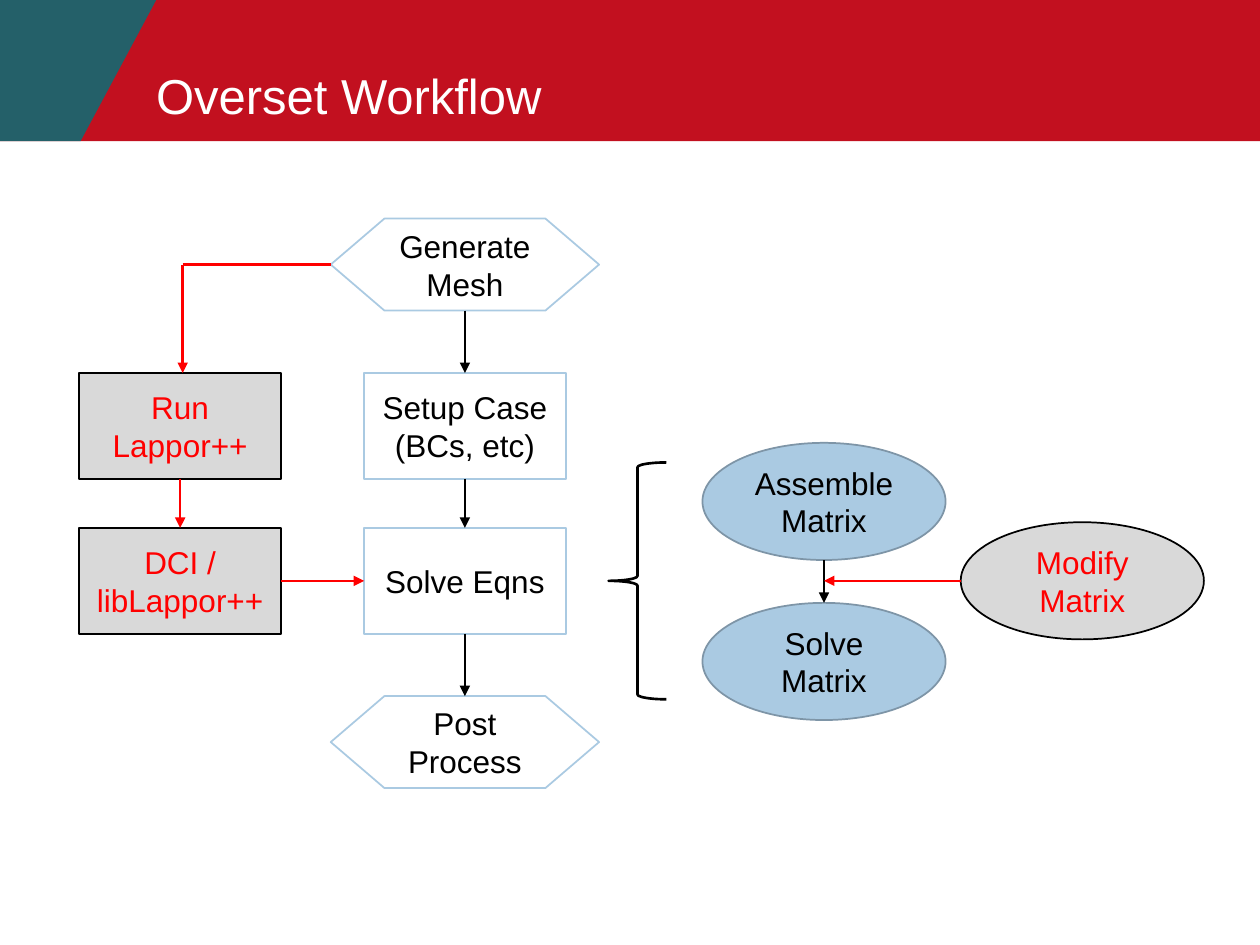
"""Build the Overset Workflow slide."""
from dataclasses import dataclass

from lxml.etree import SubElement
from pptx import Presentation
from pptx.dml.color import RGBColor
from pptx.enum.shapes import MSO_CONNECTOR, MSO_SHAPE
from pptx.enum.text import MSO_ANCHOR, PP_ALIGN
from pptx.oxml.ns import qn
from pptx.util import Inches, Pt

RED = RGBColor(0xC2, 0x10, 0x1F)
TEAL = RGBColor(0x24, 0x60, 0x69)
WHITE = RGBColor(0xFF, 0xFF, 0xFF)
BLACK = RGBColor(0x00, 0x00, 0x00)
LIGHT_BLUE = RGBColor(0xAA, 0xCA, 0xE2)
SLATE = RGBColor(0x7E, 0x95, 0xA7)
GREY = RGBColor(0xD9, 0xD9, 0xD9)
OVERSET_RED = RGBColor(0xFF, 0x00, 0x00)

BANNER_HEIGHT = 1.12
MAIN_X, OVERSET_X, MATRIX_X, MODIFY_X = 3.69, 1.43, 6.54, 8.59
MESH_Y, SETUP_Y, SOLVE_Y, POST_Y = 2.1, 3.38, 4.61, 5.89
ASSEMBLE_Y, SOLVE_MATRIX_Y = 3.98, 5.25


@dataclass(frozen=True)
class Style:
    """Geometry, size and colours shared by one kind of step."""
    geometry: MSO_SHAPE
    width: float
    height: float
    fill: RGBColor
    outline: RGBColor
    ink: RGBColor = BLACK


@dataclass(frozen=True)
class Step:
    """A labelled step placed by its centre."""
    label: str
    x: float
    y: float
    style: Style

    @property
    def left(self) -> float:
        """Left edge."""
        return self.x - self.style.width / 2

    @property
    def right(self) -> float:
        """Right edge."""
        return self.x + self.style.width / 2

    @property
    def top(self) -> float:
        """Top edge."""
        return self.y - self.style.height / 2

    @property
    def bottom(self) -> float:
        """Bottom edge."""
        return self.y + self.style.height / 2


TERMINAL = Style(MSO_SHAPE.FLOWCHART_PREPARATION, 2.13, 0.73, WHITE, LIGHT_BLUE)
PROCESS = Style(MSO_SHAPE.FLOWCHART_PROCESS, 1.6, 0.84, WHITE, LIGHT_BLUE)
OVERSET = Style(MSO_SHAPE.FLOWCHART_PROCESS, 1.6, 0.84, GREY, BLACK, OVERSET_RED)
MATRIX = Style(MSO_SHAPE.OVAL, 1.93, 0.93, LIGHT_BLUE, SLATE)
MODIFY = Style(MSO_SHAPE.OVAL, 1.93, 0.93, GREY, BLACK, OVERSET_RED)

MESH = Step("Generate Mesh", MAIN_X, MESH_Y, TERMINAL)
SETUP = Step("Setup Case (BCs, etc)", MAIN_X, SETUP_Y, PROCESS)
SOLVE = Step("Solve Eqns", MAIN_X, SOLVE_Y, PROCESS)
POST = Step("Post Process", MAIN_X, POST_Y, TERMINAL)
ASSEMBLE = Step("Assemble Matrix", MATRIX_X, ASSEMBLE_Y, MATRIX)
SOLVE_MATRIX = Step("Solve Matrix", MATRIX_X, SOLVE_MATRIX_Y, MATRIX)
RUN = Step("Run Lappor++", OVERSET_X, SETUP_Y, OVERSET)
DCI = Step("DCI /\nlibLappor++", OVERSET_X, SOLVE_Y, OVERSET)
MODIFY_MATRIX = Step("Modify Matrix", MODIFY_X, SOLVE_Y, MODIFY)

STEPS = (MESH, SETUP, SOLVE, POST, ASSEMBLE, SOLVE_MATRIX, RUN, DCI, MODIFY_MATRIX)
DOWNWARD = (
    (MESH, SETUP, BLACK),
    (SETUP, SOLVE, BLACK),
    (SOLVE, POST, BLACK),
    (ASSEMBLE, SOLVE_MATRIX, BLACK),
    (RUN, DCI, OVERSET_RED),
)


def write_text(shape, text: str, *, size: float = 18, color: RGBColor = BLACK,
               align=PP_ALIGN.CENTER, anchor=MSO_ANCHOR.MIDDLE, side_inset: float = 0.1) -> None:
    """Fill a shape with formatted paragraphs, one per line of text."""
    frame = shape.text_frame
    frame.word_wrap = True
    frame.vertical_anchor = anchor
    frame.margin_left = frame.margin_right = Inches(side_inset)
    frame.text = text
    for paragraph in frame.paragraphs:
        paragraph.alignment = align
        paragraph.font.name = "Arial"
        paragraph.font.size = Pt(size)
        paragraph.font.color.rgb = color


def paint(shape, fill: RGBColor | None, outline: RGBColor | None, weight: float = 1) -> None:
    """Set fill and outline and remove the shadow."""
    shape.shadow.inherit = False
    if fill is None:
        shape.fill.background()
    else:
        shape.fill.solid()
        shape.fill.fore_color.rgb = fill
    if outline is None:
        shape.line.fill.background()
    else:
        shape.line.color.rgb = outline
        shape.line.width = Pt(weight)


def draw_banner(slide) -> None:
    """Draw the title band with its slanted corner."""
    band = slide.shapes.add_shape(MSO_SHAPE.RECTANGLE, 0, 0, Inches(10), Inches(BANNER_HEIGHT))
    paint(band, RED, None)
    corner = [(1.24, 0), (0.64, BANNER_HEIGHT), (0, BANNER_HEIGHT)]
    builder = slide.shapes.build_freeform(0, 0)
    builder.add_line_segments([(Inches(x), Inches(y)) for x, y in corner], close=True)
    paint(builder.convert_to_shape(), TEAL, None)
    title = slide.shapes.add_textbox(Inches(1.24), Inches(0.06), Inches(8.03), Inches(0.98))
    write_text(title, "Overset Workflow", size=28, color=WHITE, align=PP_ALIGN.LEFT,
               anchor=MSO_ANCHOR.BOTTOM, side_inset=0)


def draw_step(slide, step: Step) -> None:
    """Draw one workflow step."""
    style = step.style
    shape = slide.shapes.add_shape(style.geometry, Inches(step.left), Inches(step.top),
                                   Inches(style.width), Inches(style.height))
    paint(shape, style.fill, style.outline)
    write_text(shape, step.label, color=style.ink)


def draw_link(slide, start: tuple[float, float], end: tuple[float, float],
              color: RGBColor, arrow: bool = True) -> None:
    """Draw a straight link, with an arrowhead at its end if asked."""
    link = slide.shapes.add_connector(MSO_CONNECTOR.STRAIGHT, *map(Inches, start + end))
    link.line.color.rgb = color
    link.line.width = Pt(1.5)
    if arrow:
        SubElement(link.line._get_or_add_ln(), qn("a:tailEnd"), type="triangle")
    SubElement(link._element.spPr, qn("a:effectLst"))


def main() -> None:
    """Build and save the slide."""
    deck = Presentation()
    deck.slide_width, deck.slide_height = Inches(10), Inches(7.5)
    slide = deck.slides.add_slide(deck.slide_layouts[6])
    draw_banner(slide)
    for step in STEPS:
        draw_step(slide, step)
    for source, target, color in DOWNWARD:
        draw_link(slide, (source.x, source.bottom), (target.x, target.top), color)

    brace = slide.shapes.add_shape(MSO_SHAPE.LEFT_BRACE, Inches(4.83), Inches(3.67),
                                   Inches(0.46), Inches(1.88))
    paint(brace, None, BLACK, 1.5)

    bend = (1.45, MESH.y)
    draw_link(slide, bend, (MESH.left, MESH.y), OVERSET_RED, arrow=False)
    draw_link(slide, bend, (bend[0], RUN.top), OVERSET_RED)
    draw_link(slide, (DCI.right, DCI.y), (SOLVE.left, SOLVE.y), OVERSET_RED)
    draw_link(slide, (MODIFY_MATRIX.left, SOLVE_Y), (MATRIX_X, SOLVE_Y), OVERSET_RED)
    deck.save("out.pptx")


if __name__ == "__main__":
    main()
